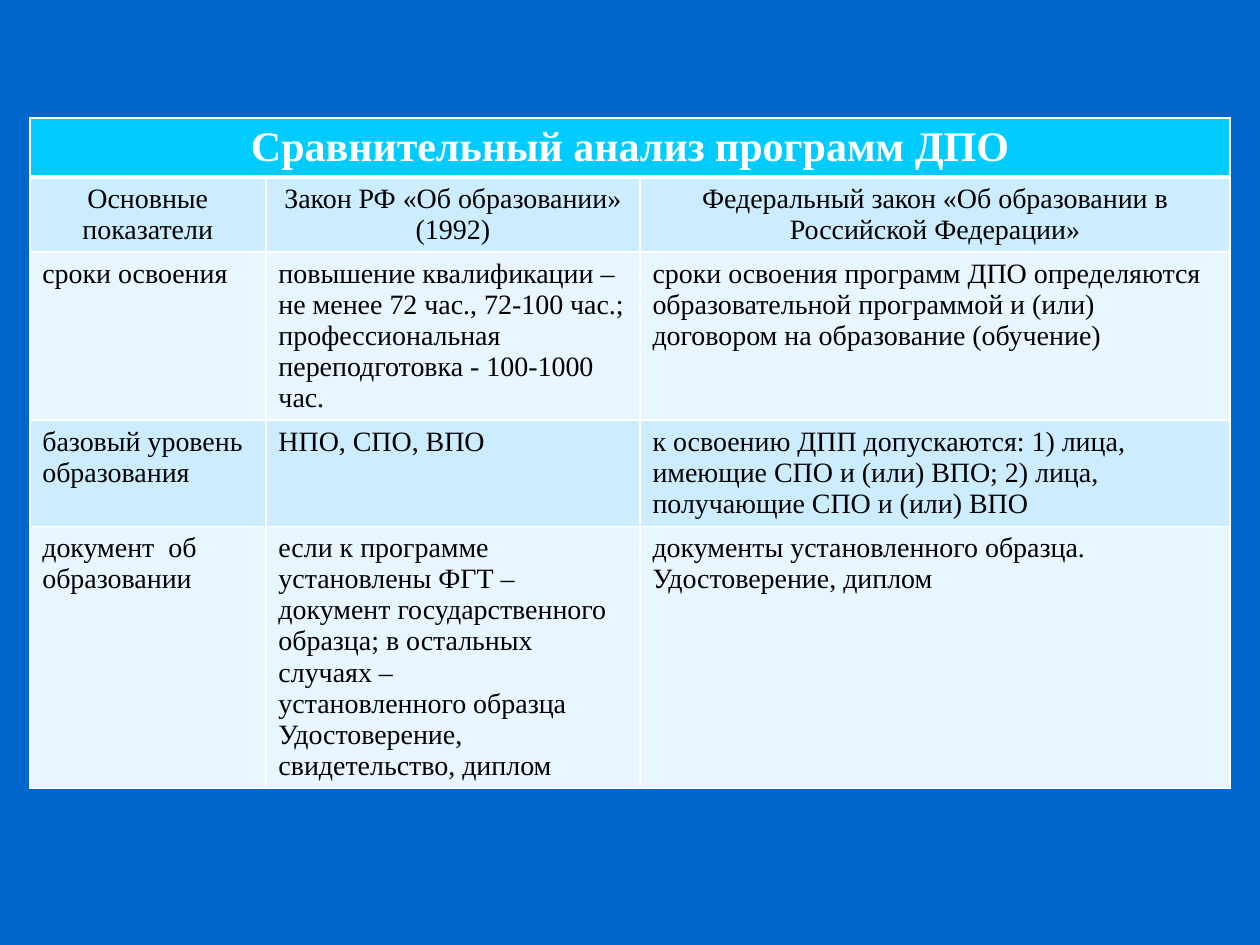
import pptx
import pptx.util
import pptx.dml.color
import pptx.enum.text
import pptx.oxml
import pptx.oxml.ns
from pptx.util import Cm

BLUE = pptx.dml.color.RGBColor(0x00, 0x66, 0xCC)
CYAN = pptx.dml.color.RGBColor(0x00, 0xCC, 0xFF)
LIGHT = pptx.dml.color.RGBColor(0xCC, 0xEC, 0xFF)
PALE = pptx.dml.color.RGBColor(0xE7, 0xF6, 0xFF)
WHITE = pptx.dml.color.RGBColor(0xFF, 0xFF, 0xFF)
BLACK = pptx.dml.color.RGBColor(0x00, 0x00, 0x00)

HEADING = "Сравнительный анализ программ ДПО"
COMPARISON = [
    ["Основные показатели",
     "Закон РФ «Об образовании» (1992)",
     "Федеральный закон «Об образовании в Российской Федерации»"],
    ["сроки освоения",
     "повышение квалификации – не менее 72 час., 72-100 час.;\n"
     "профессиональная переподготовка - 100-1000 час.",
     "сроки освоения программ ДПО определяются образовательной программой "
     "и (или) договором на образование (обучение)"],
    ["базовый уровень образования",
     "НПО, СПО, ВПО",
     "к освоению ДПП допускаются: 1) лица, имеющие СПО и (или) ВПО; "
     "2) лица, получающие СПО и (или) ВПО"],
    ["документ  об образовании",
     "если к программе установлены ФГТ – документ государственного образца; "
     "в остальных случаях –\nустановленного образца\n"
     "Удостоверение, свидетельство, диплом",
     "документы установленного образца.\nУдостоверение, диплом"],
]
COLUMN_WIDTHS = [Cm(4.76), Cm(7.54), Cm(11.9)]
ROW_HEIGHTS = [Cm(1.19), Cm(1.5), Cm(3.39), Cm(2.14), Cm(5.28)]


def fill_cell(cell, text, size, color, bold, centered, background):
    cell.fill.solid()
    cell.fill.fore_color.rgb = background
    cell.text_frame.text = text
    for paragraph in cell.text_frame.paragraphs:
        if centered:
            paragraph.alignment = pptx.enum.text.PP_ALIGN.CENTER
        for run in paragraph.runs:
            run.font.name = "Times New Roman"
            run.font.size = pptx.util.Pt(size)
            run.font.bold = bold
            run.font.color.rgb = color


def set_borders(cell, top, bottom):
    properties = cell._tc.get_or_add_tcPr()
    widths = {"lnL": 1, "lnR": 1, "lnT": top, "lnB": bottom}
    for position, (side, width) in enumerate(widths.items()):
        border = pptx.oxml.parse_xml(
            f'<a:{side} {pptx.oxml.ns.nsdecls("a")} w="{pptx.util.Pt(width)}">'
            f'<a:solidFill><a:srgbClr val="{WHITE}"/></a:solidFill></a:{side}>')
        properties.insert(position, border)


presentation = pptx.Presentation()
presentation.slide_width = Cm(25.4)
presentation.slide_height = Cm(19.05)
slide = presentation.slides.add_slide(presentation.slide_layouts[6])
slide.background.fill.solid()
slide.background.fill.fore_color.rgb = BLUE

comparison = slide.shapes.add_table(
    len(ROW_HEIGHTS), len(COLUMN_WIDTHS), Cm(0.6), Cm(2.38),
    sum(COLUMN_WIDTHS), sum(ROW_HEIGHTS)).table
for column, width in zip(comparison.columns, COLUMN_WIDTHS):
    column.width = width
for row, height in zip(comparison.rows, ROW_HEIGHTS):
    row.height = height

heading = comparison.cell(0, 0)
heading.merge(comparison.cell(0, 2))
fill_cell(heading, HEADING, 24, WHITE, True, True, CYAN)
for heading_part in comparison.rows[0].cells:
    set_borders(heading_part, 1, 3)

for row_number, texts in enumerate(COMPARISON, start=1):
    background = LIGHT if row_number % 2 else PALE
    for column_number, text in enumerate(texts):
        cell = comparison.cell(row_number, column_number)
        fill_cell(cell, text, 16, BLACK, False, row_number == 1, background)
        set_borders(cell, 3 if row_number == 1 else 1, 1)

presentation.save("out.pptx")
